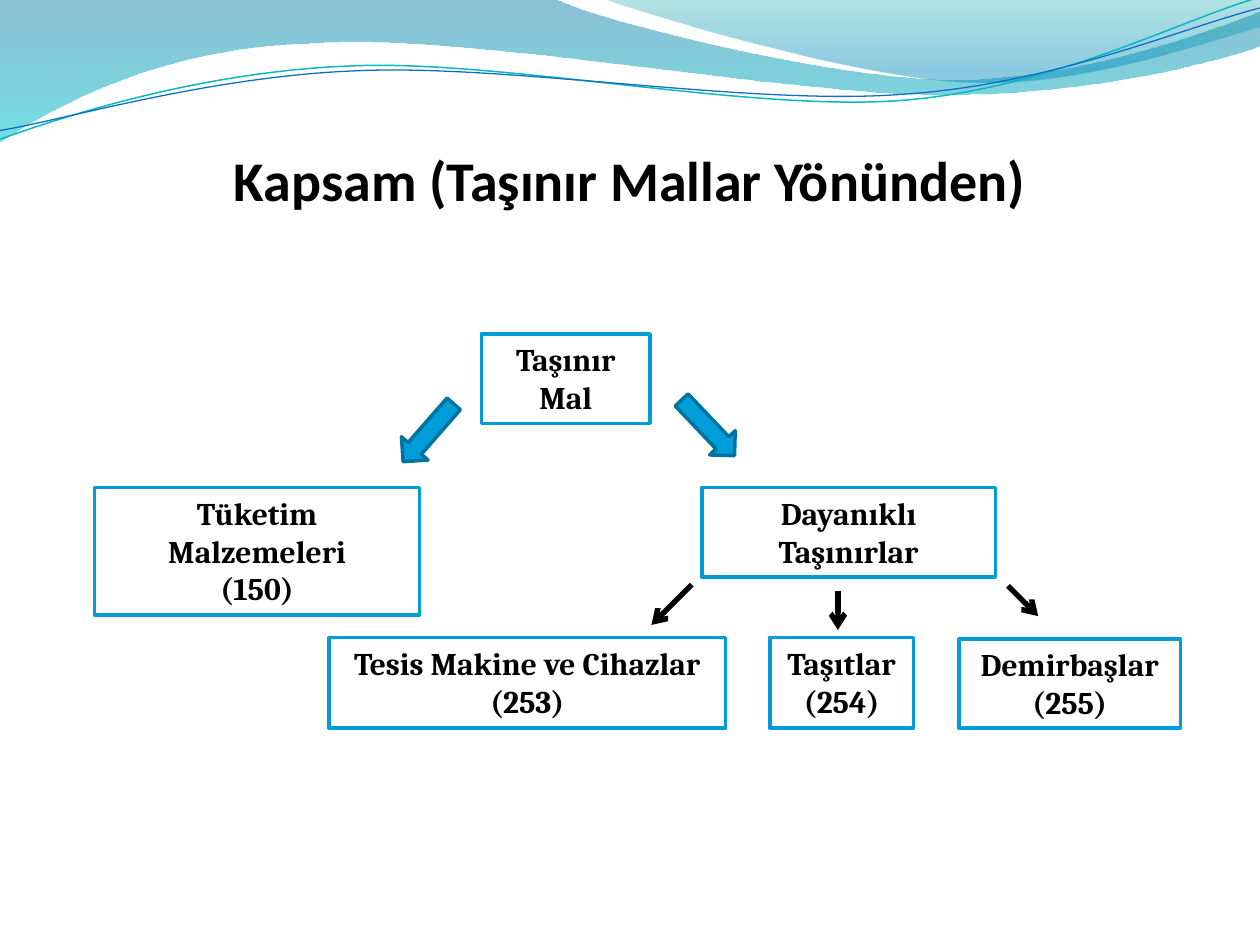
from dataclasses import dataclass

from lxml import etree
from pptx import Presentation
from pptx.dml.color import RGBColor
from pptx.enum.shapes import MSO_CONNECTOR, MSO_SHAPE
from pptx.enum.text import MSO_ANCHOR, MSO_AUTO_SIZE, PP_ALIGN
from pptx.oxml.ns import qn
from pptx.util import Inches, Pt

RECT, ARROW = MSO_SHAPE.RECTANGLE, MSO_SHAPE.DOWN_ARROW
STRAIGHT = MSO_CONNECTOR.STRAIGHT
TOP, MIDDLE, CENTER = MSO_ANCHOR.TOP, MSO_ANCHOR.MIDDLE, PP_ALIGN.CENTER
GROW, FIXED = MSO_AUTO_SIZE.SHAPE_TO_FIT_TEXT, MSO_AUTO_SIZE.NONE


@dataclass(frozen=True)
class Theme:
    ink: RGBColor = RGBColor.from_string("000000")
    paper: RGBColor = RGBColor.from_string("FFFFFF")
    blue: RGBColor = RGBColor.from_string("009DD9")
    edge: RGBColor = RGBColor.from_string("0074A1")
    aqua: RGBColor = RGBColor.from_string("00C6CF")
    teal: RGBColor = RGBColor.from_string("00A1A9")
    sky: RGBColor = RGBColor.from_string("008BBF")
    wave_a: RGBColor = RGBColor.from_string("0AB8BF")
    wave_b: RGBColor = RGBColor.from_string("0F6FC6")
    head: str = "Calibri"
    body: str = "Cambria"
    head_size: int = 32
    body_size: int = 18


theme = Theme()


def write(shape, text, font=theme.body, size=theme.body_size, anchor=TOP, fit=GROW):
    frame = shape.text_frame
    frame.word_wrap = True
    frame.auto_size = fit
    frame.vertical_anchor = anchor
    frame.text = text
    for para in frame.paragraphs:
        para.alignment = CENTER
        for run in para.runs:
            run.font.name = font
            run.font.size = Pt(size)
            run.font.bold = True
            run.font.color.rgb = theme.ink


def trace(start, parts, close):
    """Draw a freeform in inches; a part is a point or the six numbers of a cubic curve."""
    pts = [(Inches(part[i]), Inches(part[i + 1]))
           for part in parts for i in range(0, len(part), 2)]
    pen = slide.shapes.build_freeform(Inches(start[0]), Inches(start[1]))
    pen.add_line_segments(pts, close=close)
    shape = pen.convert_to_shape()
    shape.shadow.inherit = False
    steps = iter(list(shape._element.iter(qn("a:lnTo"))))
    for part in parts:
        step = next(steps)
        if len(part) == 6:
            curve = etree.Element(qn("a:cubicBezTo"))
            step.addprevious(curve)
            for old in (step, next(steps), next(steps)):
                curve.append(old[0])
                old.getparent().remove(old)
    return shape


deck = Presentation()
deck.slide_width, deck.slide_height = Inches(10), Inches(7.5)
slide = deck.slides.add_slide(deck.slide_layouts[5])

# Filled waves: start, parts, then colour, position and opacity of each stop
bands = [
    ((0, 0),
     [(4.4, -0.01), (4.76, 0.17, 6.64, 0.63, 7.58, 0.63),
      (8.53, 0.63, 9.58, 0.26, 10, 0.09), (10.01, 0.36),
      (9.83, 0.44, 8.7, 0.76, 7.46, 0.75), (6.22, 0.75, 3.82, 0.28, 2.57, 0.34),
      (1.29, 0.36, 0.46, 0.83, -0.01, 1.13), (0, 0)],
     [(theme.edge, 0, 45), (theme.aqua, 1, 55)]),
    ((4.79, -0.01),
     [(5.09, 0.11, 6.82, 0.62, 7.69, 0.65), (8.56, 0.69, 9.61, 0.32, 10, 0.21),
      (10, 0), (4.79, -0.01)],
     [(theme.teal, 0, 30), (theme.sky, 0.8, 45)]),
]
for start, parts, stops in bands:
    band = trace(start, parts, True)
    band.line.fill.background()
    band.fill.gradient()
    band.fill.gradient_angle = 270
    for stop, (color, place, _) in zip(band.fill.gradient_stops, stops):
        stop.color.rgb = color
        stop.position = place
    tints = band._element.spPr.iter(qn("a:srgbClr"))
    for tint, (_, _, alpha) in zip(tints, stops):
        etree.SubElement(tint, qn("a:alpha")).set("val", str(alpha * 1000))

# Thin wave lines, drawn level and then tilted
waves = [
    ((-0.02, 0.87),
     [(0.47, 0.72, 1.58, 0.41, 2.78, 0.42), (3.96, 0.42, 5.91, 0.93, 7.12, 0.9),
      (8.32, 0.87, 9.4, 0.36, 10, 0.22)], theme.wave_a, 0.85),
    ((-0.02, 0.8),
     [(0.46, 0.75, 1.64, 0.45, 2.83, 0.46), (4.03, 0.46, 5.96, 0.89, 7.16, 0.85),
      (8.35, 0.83, 9.42, 0.42, 10.02, 0.3)], theme.wave_b, 0.75),
]
for start, parts, color, width in waves:
    wave = trace(start, parts, False)
    wave.rotation = 357.3
    wave.fill.background()
    wave.line.color.rgb = color
    wave.line.width = Pt(width)

title = slide.shapes.title
slide.shapes._spTree.append(title._element)  # in front of the waves
title.left, title.top = Inches(0.5), Inches(0.77)
title.width, title.height = Inches(9), Inches(1.25)
write(title, "Kapsam (Taşınır Mallar Yönünden)",
      font=theme.head, size=theme.head_size, anchor=MIDDLE, fit=FIXED)
frame = title.text_frame
frame.margin_left = frame.margin_right = frame.margin_bottom = 0
frame.margin_top = Inches(0.05)

boxes = [
    ("Tüketim Malzemeleri\n(150)", 0.75, 3.87, 2.58, 1.01),
    ("Dayanıklı Taşınırlar", 5.57, 3.87, 2.33, 0.71),
    ("Demirbaşlar\n(255)", 7.61, 5.07, 1.76, 0.71),
    ("Taşıtlar\n(254)", 6.11, 5.06, 1.14, 0.72),
    ("Tesis Makine ve Cihazlar\n(253)", 2.61, 5.06, 3.15, 0.72),
    ("Taşınır Mal", 3.82, 2.65, 1.34, 0.71),
]
for text, *place in boxes:
    box = slide.shapes.add_shape(RECT, *map(Inches, place))
    box.shadow.inherit = False
    box.fill.solid()
    box.fill.fore_color.rgb = theme.paper
    box.line.color.rgb = theme.blue
    box.line.width = Pt(2)
    write(box, text)

for left, top, angle in [(3.26, 3.13, 41.2), (5.48, 3.09, 316.5)]:
    arrow = slide.shapes.add_shape(
        ARROW, Inches(left), Inches(top), Inches(0.28), Inches(0.61))
    arrow.rotation = angle
    arrow.shadow.inherit = False
    arrow.fill.solid()
    arrow.fill.fore_color.rgb = theme.blue
    arrow.line.color.rgb = theme.edge
    arrow.line.width = Pt(2)

links = [(5.49, 4.64, 5.17, 4.96), (6.65, 4.69, 6.65, 5), (8, 4.65, 8.24, 4.89)]
for ends in links:
    link = slide.shapes.add_connector(STRAIGHT, *map(Inches, ends))
    link.line.color.rgb = theme.ink
    link.line.width = Pt(3)
    etree.SubElement(link.line._get_or_add_ln(), qn("a:tailEnd")).set("type", "arrow")
    etree.SubElement(link._element.spPr, qn("a:effectLst"))

deck.save("out.pptx")
